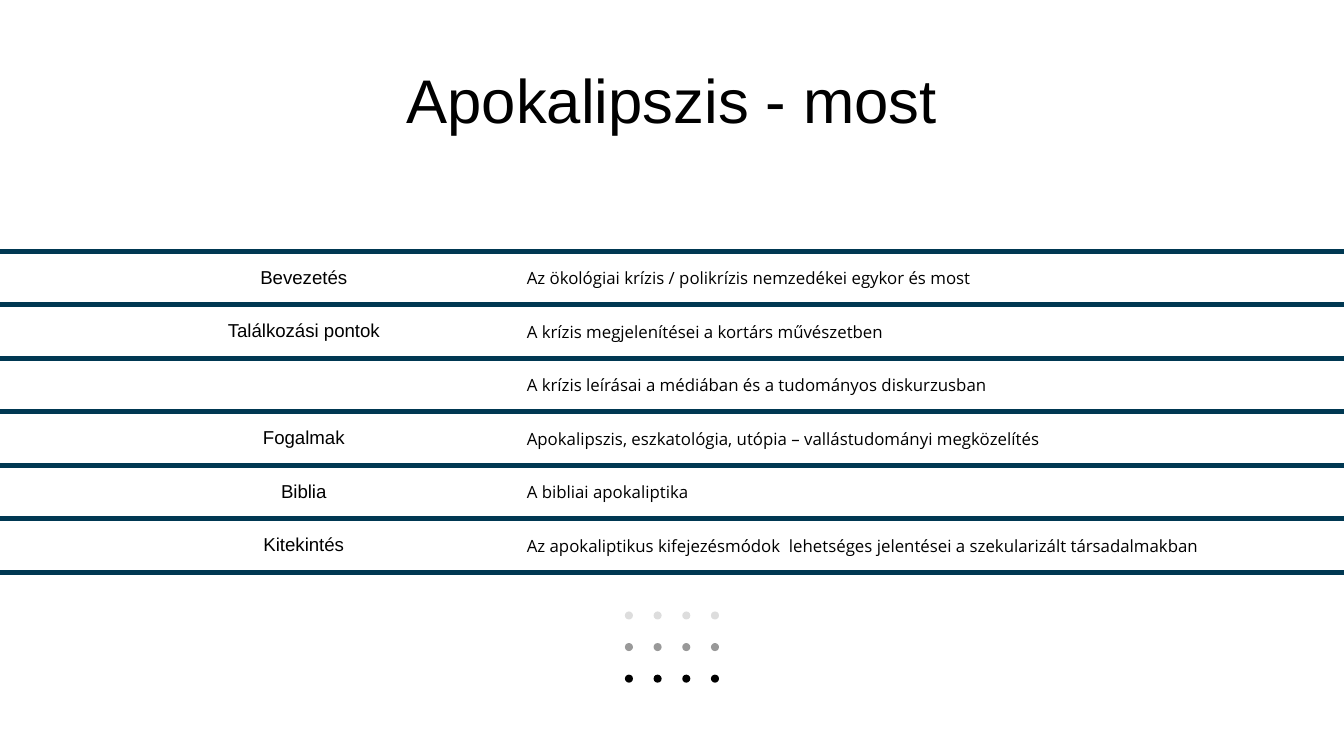
from lxml.etree import SubElement
from pptx import Presentation
from pptx.dml.color import RGBColor
from pptx.enum.shapes import MSO_SHAPE
from pptx.enum.text import MSO_ANCHOR, PP_ALIGN
from pptx.oxml.ns import qn
from pptx.util import Inches, Pt

BLACK = RGBColor(0x00, 0x00, 0x00)
NAVY = RGBColor(0x00, 0x38, 0x52)
GRAY = RGBColor(0x99, 0x99, 0x99)
LIGHT_GRAY = RGBColor(0xDD, 0xDD, 0xDD)

AGENDA = [
    ("Bevezetés", "Az ökológiai krízis / polikrízis nemzedékei egykor és most"),
    ("Találkozási pontok", "A krízis megjelenítései a kortárs művészetben"),
    ("", "A krízis leírásai a médiában és a tudományos diskurzusban"),
    ("Fogalmak", "Apokalipszis, eszkatológia, utópia – vallástudományi megközelítés"),
    ("Biblia", "A bibliai apokaliptika"),
    ("Kitekintés", "Az apokaliptikus kifejezésmódok  lehetséges jelentései a szekularizált társadalmakban"),
]


class AgendaSlide:
    heading_font = "Arial"
    body_font = "Open Sans"
    rule_width = Pt(3)

    def __init__(self, slide):
        self.slide = slide

    def format_text(self, text_frame, font_name, size, alignment):
        paragraph = text_frame.paragraphs[0]
        paragraph.alignment = alignment
        paragraph.font.size = Pt(size)
        for run in paragraph.runs:
            run.font.name = font_name
            run.font.size = Pt(size)
            run.font.color.rgb = BLACK

    def add_title(self, text, left, top, width, height):
        shape = self.slide.shapes.add_textbox(Inches(left), Inches(top), Inches(width), Inches(height))
        text_frame = shape.text_frame
        text_frame.word_wrap = True
        text_frame.vertical_anchor = MSO_ANCHOR.TOP
        text_frame.margin_top = 0
        text_frame.margin_bottom = Inches(0.1)
        text_frame.text = text
        self.format_text(text_frame, self.heading_font, 33, PP_ALIGN.CENTER)

    def set_rules(self, cell):
        """Draw rules above and below the cell and none at its sides."""
        cell_properties = cell._tc.get_or_add_tcPr()
        for index, side in enumerate(("lnL", "lnR", "lnT", "lnB")):
            line = SubElement(cell_properties, qn(f"a:{side}"))
            cell_properties.insert(index, line)
            if side in ("lnL", "lnR"):
                SubElement(line, qn("a:noFill"))
            else:
                line.set("w", str(self.rule_width))
                fill = SubElement(line, qn("a:solidFill"))
                SubElement(fill, qn("a:srgbClr")).set("val", str(NAVY))

    def fill_cell(self, cell, text, margins, font_name, size, alignment):
        cell.fill.background()
        cell.vertical_anchor = MSO_ANCHOR.MIDDLE
        cell.margin_left, cell.margin_right = (Inches(margin) for margin in margins)
        cell.margin_top = cell.margin_bottom = 0
        cell.text_frame.text = text
        self.format_text(cell.text_frame, font_name, size, alignment)
        self.set_rules(cell)

    def add_agenda(self, rows, left, top, column_widths, height):
        frame = self.slide.shapes.add_table(
            len(rows), len(column_widths), Inches(left), Inches(top),
            Inches(sum(column_widths)), Inches(height))
        table = frame.table
        table.first_row = table.horz_banding = False
        for column, width in zip(table.columns, column_widths):
            column.width = Inches(width)
        for row, (topic, description) in zip(table.rows, rows):
            topic_cell, description_cell = row.cells
            self.fill_cell(topic_cell, topic, (0.8, 0.1), self.heading_font, 10, PP_ALIGN.CENTER)
            self.fill_cell(description_cell, description, (0.1, 0), self.body_font, 9, PP_ALIGN.LEFT)

    def add_dot(self, left, top, diameter, color):
        shape = self.slide.shapes.add_shape(
            MSO_SHAPE.OVAL, Inches(left), Inches(top), Inches(diameter), Inches(diameter))
        shape.shadow.inherit = False
        shape.fill.solid()
        shape.fill.fore_color.rgb = color
        shape.line.fill.background()

    def add_dot_grid(self, left, top, right, bottom, columns, row_colors):
        """Spread dots evenly between the first and last column and row."""
        column_step = (right - left) / (columns - 1)
        row_step = (bottom - top) / (len(row_colors) - 1)
        for row, color in enumerate(row_colors):
            for column in range(columns):
                self.add_dot(left + column * column_step, top + row * row_step, 0.06, color)


def main():
    presentation = Presentation()
    presentation.slide_width = Inches(10)
    presentation.slide_height = Inches(10 * 9 / 16)
    blank_layout = presentation.slide_layouts[6]
    agenda_slide = AgendaSlide(presentation.slides.add_slide(blank_layout))
    agenda_slide.add_agenda(AGENDA, 0, 1.87, (3.82, 6.18), 2.39)
    agenda_slide.add_title("Apokalipszis - most", 0.78, 0.46, 8.44, 0.58)
    agenda_slide.add_dot_grid(4.65, 4.55, 5.29, 5.02, 4, (LIGHT_GRAY, GRAY, BLACK))
    presentation.save("out.pptx")


if __name__ == "__main__":
    main()
